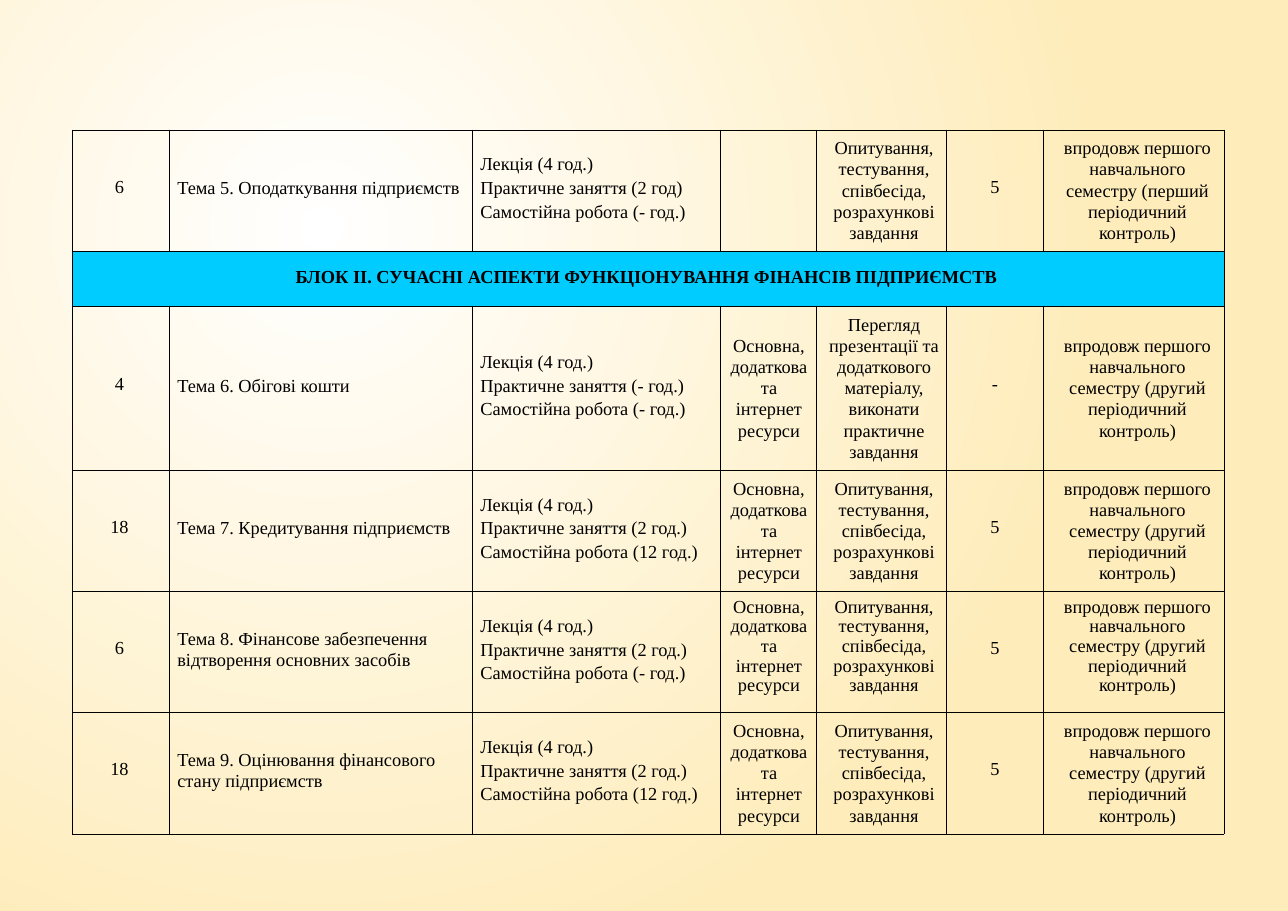
import pptx
import pptx.dml.color
import pptx.enum.text
import pptx.oxml
import pptx.oxml.ns
import pptx.util

Inches = pptx.util.Inches
Pt = pptx.util.Pt
ALIGN = pptx.enum.text.PP_ALIGN
NS = pptx.oxml.ns.nsdecls("a")
qn = pptx.oxml.ns.qn


def color(code):
    return pptx.dml.color.RGBColor.from_string(code)


def write(cell, text, align=ALIGN.CENTER, bold=False, spacing=Pt(13.8), margins=(0, 0, 0)):
    """Fill a cell; margins are left, right and bottom in inches."""
    cell.vertical_anchor = pptx.enum.text.MSO_ANCHOR.MIDDLE
    cell.margin_top = 0
    cell.margin_left, cell.margin_right, cell.margin_bottom = map(Inches, margins)
    cell.text = text
    for paragraph in cell.text_frame.paragraphs:
        paragraph.alignment = align
        paragraph.line_spacing = spacing
        for run in paragraph.runs:
            run.font.name = "Times New Roman"
            run.font.size = Pt(12)
            run.font.bold = bold
            run.font.color.rgb = color("000000")


# Slide and its radial background
deck = pptx.Presentation()
deck.slide_width, deck.slide_height = Inches(11.69), Inches(8.27)
slide = deck.slides.add_slide(deck.slide_layouts[6])
backdrop = slide.background.fill
backdrop.gradient()
for stop, position, code in zip(backdrop.gradient_stops, (0, 1), ("FFFFFF", "FEECBA")):
    stop.position = position
    stop.color.rgb = color(code)
gradient = slide.element.find(".//" + qn("a:gradFill"))
gradient.replace(gradient.find(qn("a:lin")), pptx.oxml.parse_xml(
    f'<a:path {NS} path="circle">'
    '<a:fillToRect l="50000" t="50000" r="100000" b="100000"/></a:path>'))

# Course content: hours, topic, lecture / practice / own hours, sources, control, points, term
SOURCES = "Основна, додаткова та інтернет ресурси"
QUIZ = "Опитування, тестування, співбесіда, розрахункові завдання"
REVIEW = "Перегляд презентації та додаткового матеріалу, виконати практичне завдання"
BLOCK = "БЛОК ІІ. СУЧАСНІ АСПЕКТИ ФУНКЦІОНУВАННЯ ФІНАНСІВ ПІДПРИЄМСТВ"
topics = [
    ("6", "Тема 5. Оподаткування підприємств", "2 год", "-", "", QUIZ, "5", "перший"),
    None,  # block heading
    ("4", "Тема 6. Обігові кошти", "- год.", "-", SOURCES, REVIEW, "-", "другий"),
    ("18", "Тема 7. Кредитування підприємств", "2 год.", "12", SOURCES, QUIZ, "5", "другий"),
    ("6", "Тема 8. Фінансове забезпечення відтворення основних засобів",
     "2 год.", "-", SOURCES, QUIZ, "5", "другий"),
    ("18", "Тема 9. Оцінювання фінансового стану підприємств",
     "2 год.", "12", SOURCES, QUIZ, "5", "другий"),
]
TIGHT_ROW = 4

# Table grid
widths = (0.88, 2.75, 2.25, 0.87, 1.18, 0.88, 1.64)
heights = (1.1, 0.5, 1.49, 1.1, 1.1, 1.1)
plan = slide.shapes.add_table(
    len(heights), len(widths), Inches(0.66), Inches(1.18),
    Inches(sum(widths)), Inches(sum(heights))).table
plan.first_row = plan.horz_banding = False
for column, width in zip(plan.columns, widths):
    column.width = Inches(width)
for row, height in zip(plan.rows, heights):
    row.height = Inches(height)

# Transparent cells with thin black borders
for cell in plan.iter_cells():
    cell.fill.background()
    properties = cell._tc.get_or_add_tcPr()
    for place, side in enumerate(("lnL", "lnR", "lnT", "lnB")):
        properties.insert(place, pptx.oxml.parse_xml(
            f'<a:{side} {NS} w="6350"><a:solidFill><a:srgbClr val="000000"/>'
            f'</a:solidFill></a:{side}>'))

# Text
for index, topic in enumerate(topics):
    cells = plan.rows[index].cells
    if topic is None:
        cells[0].merge(cells[len(widths) - 1])
        cells[0].fill.solid()
        cells[0].fill.fore_color.rgb = color("00CCFF")
        write(cells[0], BLOCK, bold=True, margins=(0.09, 0.12, 0.03))
        continue
    hours, title, practice, own, sources, control, points, term = topic
    tight = index == TIGHT_ROW
    spacing, lift = (0.96, 0.1) if tight else (Pt(13.8), 0)
    lessons = (f"Лекція (4 год.)\nПрактичне заняття ({practice}) "
               f"Самостійна робота ({own} год.)")
    deadline = f"впродовж першого навчального семестру ({term} періодичний контроль)"
    write(cells[0], hours, margins=(0, 0.03, 0.07))
    write(cells[1], title, align=ALIGN.LEFT, margins=(0.07, 0.05, 0.05))
    write(cells[2], lessons, align=ALIGN.LEFT, spacing=Pt(15.5), margins=(0.07, 0.01, 0.07))
    write(cells[3], sources, spacing=spacing, margins=(0.07, 0.06, lift))
    write(cells[4], control, spacing=spacing, margins=(0.1, 0.05, lift))
    write(cells[5], points, margins=(0, 0, 0.07))
    write(cells[6], deadline, spacing=spacing, margins=(0.14, 0.07, lift))

deck.save("out.pptx")
